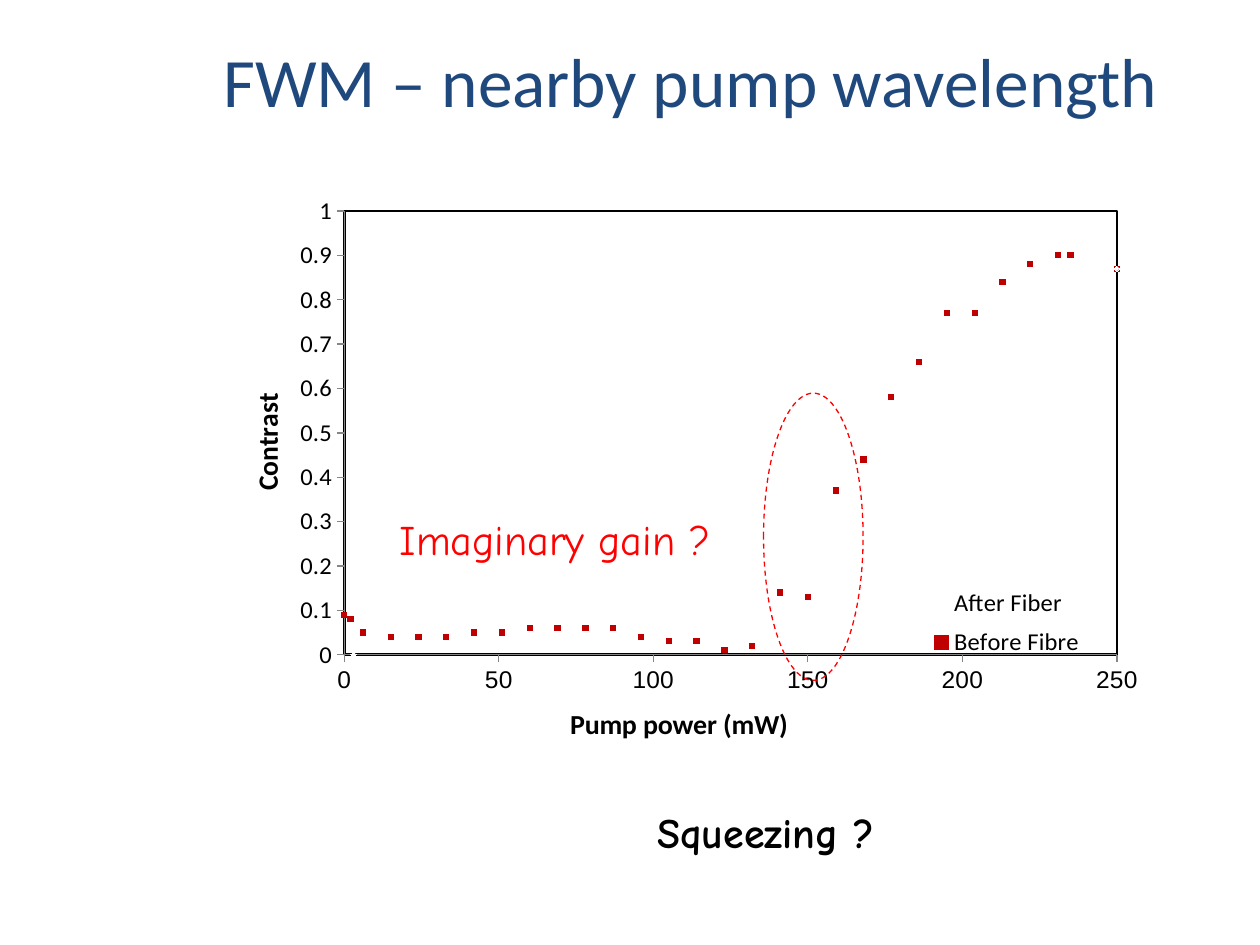
from lxml.etree import SubElement
from pptx import Presentation
from pptx.chart.data import XyChartData
from pptx.dml.color import RGBColor
from pptx.enum.chart import XL_CHART_TYPE, XL_LEGEND_POSITION, XL_MARKER_STYLE, XL_TICK_MARK
from pptx.enum.dml import MSO_LINE
from pptx.enum.shapes import MSO_SHAPE
from pptx.enum.text import MSO_ANCHOR, PP_ALIGN
from pptx.oxml import parse_xml
from pptx.oxml.ns import nsdecls, qn
from pptx.util import Inches, Pt

AFTER_FIBER = (
    [250, 242, 233, 225, 216, 208, 199, 191, 183, 174, 166, 157, 149, 140, 132, 123,
     115, 107, 98, 90, 81, 73, 64, 56, 48, 39, 31, 22, 14, 10, 5, 3],
    [0.87, 0.86, 0.83, 0.82, 0.78, 0.74, 0.67, 0.59, 0.47, 0.38, 0.28, 0.15, 0.03,
     0.21, 0.26, 0.32, 0.39, 0.45, 0.45, 0.4, 0.44, 0.51, 0.55, 0.58, 0.59, 0.6,
     0.59, 0.58, 0.51, 0.41, 0.32, 0])
BEFORE_FIBRE = (
    [0, 2, *range(6, 232, 9), 235, 250],
    [0.09, 0.08, 0.05, 0.04, 0.04, 0.04, 0.05, 0.05, 0.06, 0.06, 0.06, 0.06, 0.04,
     0.03, 0.03, 0.01, 0.02, 0.14, 0.13, 0.37, 0.44, 0.58, 0.66, 0.77, 0.77, 0.84,
     0.88, 0.9, 0.9, 0.87])
SERIES = [
    ("After Fiber", AFTER_FIBER, XL_MARKER_STYLE.DIAMOND, "FFFFFF"),
    ("Before Fibre", BEFORE_FIBRE, XL_MARKER_STYLE.SQUARE, "C00000"),
]


def rgb(value):
    return RGBColor.from_string(value)


def place(parent, index, inner=False, **fractions):
    for old in parent.findall(qn("c:layout")):
        parent.remove(old)
    layout = parse_xml(f"<c:layout {nsdecls('c')}><c:manualLayout/></c:layout>")
    values = {"layoutTarget": "inner"} if inner else {}
    values.update(xMode="edge", yMode="edge", **fractions)
    for tag, value in values.items():
        SubElement(layout[0], qn(f"c:{tag}")).set("val", str(value))
    parent.insert(index, layout)


class SlideBuilder:
    body_font = "Calibri"
    note_font = "Comic Neue"
    black = "000000"
    red = "FF0000"

    def __init__(self, slide):
        self.s = slide

    def style(self, font, size, color, name, bold=False):
        font.name, font.size, font.bold = name, Pt(size), bold
        font.color.rgb = rgb(color)

    def run(self, tf, text, *style):
        p = tf.paragraphs[0]
        p.alignment = PP_ALIGN.CENTER
        r = p.add_run()
        r.text = text
        self.style(r.font, *style)

    def title(self, text, *box):
        sp = self.s.shapes.title
        sp.left, sp.top, sp.width, sp.height = map(Inches, box)
        sp.text_frame.vertical_anchor = MSO_ANCHOR.MIDDLE
        self.run(sp.text_frame, text, 39.6, "1F497D", self.body_font)

    def note(self, text, color, bold, *box):
        tf = self.s.shapes.add_textbox(*map(Inches, box)).text_frame
        tf.word_wrap = True
        self.run(tf, text, 24, color, self.note_font, bold)

    def ellipse(self, *box):
        sp = self.s.shapes.add_shape(MSO_SHAPE.OVAL, *map(Inches, box))
        sp.shadow.inherit = False
        sp.fill.background()
        sp.line.color.rgb = rgb(self.red)
        sp.line.width = Pt(0.75)
        sp.line.dash_style = MSO_LINE.DASH

    def axis(self, axis, title, top, step, font, x, y):
        axis.minimum_scale, axis.maximum_scale, axis.major_unit = 0, top, step
        axis.has_major_gridlines = False
        axis.major_tick_mark = XL_TICK_MARK.OUTSIDE
        axis.minor_tick_mark = XL_TICK_MARK.NONE
        axis.tick_labels.number_format = "General"
        axis.tick_labels.number_format_is_linked = False
        self.style(axis.tick_labels.font, 14, self.black, font)
        axis.format.line.color.rgb = rgb("868686")
        axis.format.line.width = Pt(0.75)
        self.run(axis.axis_title.text_frame, title, 16, self.black, self.body_font, True)
        place(axis.axis_title.element, 1, x=x, y=y)

    def scatter(self, *box):
        data = XyChartData()
        for name, points, _, _ in SERIES:
            series = data.add_series(name)
            for x, y in zip(*points):
                series.add_data_point(x, y)
        chart = self.s.shapes.add_chart(
            XL_CHART_TYPE.XY_SCATTER, *map(Inches, box), data).chart
        chart.has_title = False
        self.style(chart.font, 10, self.black, self.body_font)
        plot = chart.plots[0]
        plot.vary_by_categories = False
        for series, (_, _, shape, color) in zip(plot.series, SERIES):
            series.format.line.fill.background()
            marker = series.marker
            marker.style, marker.size = shape, 3
            marker.format.fill.solid()
            marker.format.fill.fore_color.rgb = rgb(color)
            marker.format.line.color.rgb = rgb(color)
        self.axis(chart.category_axis, "Pump power (mW)", 250, 50, "Arial", 0.35, 0.93)
        self.axis(chart.value_axis, "Contrast", 1, 0.1, self.body_font, 0, 0.39)
        chart.has_legend = True
        chart.legend.position = XL_LEGEND_POSITION.LEFT
        chart.legend.include_in_layout = False
        self.style(chart.legend.font, 14, self.black, self.body_font)
        place(chart.element.find(f".//{qn('c:legend')}"), 1, x=0.72, y=0.72, w=0.22, h=0.15)
        area = chart.element.find(f".//{qn('c:plotArea')}")
        place(area, 0, inner=True, x=0.11, y=0.08, w=0.84, h=0.77)
        area.append(parse_xml(
            f'<c:spPr {nsdecls("c", "a")}><a:noFill/><a:ln w="{Pt(1.5)}"><a:solidFill>'
            f'<a:srgbClr val="{self.black}"/></a:solidFill></a:ln></c:spPr>'))


def main():
    prs = Presentation()
    prs.slide_width, prs.slide_height = Inches(10), Inches(7.5)
    b = SlideBuilder(prs.slides.add_slide(prs.slide_layouts[5]))
    b.title("FWM – nearby pump wavelength", 1.38, 0.01, 8.2, 1.25)
    b.scatter(1.93, 1.31, 7.3, 4.65)
    b.note("Imaginary gain ?", b.red, False, 2.95, 4.03, 2.91, 0.5)
    b.ellipse(6.06, 3.12, 0.79, 2.28)
    b.note("Squeezing ?", b.black, True, 3.62, 6.35, 4.92, 0.5)
    prs.save("out.pptx")


if __name__ == "__main__":
    main()
